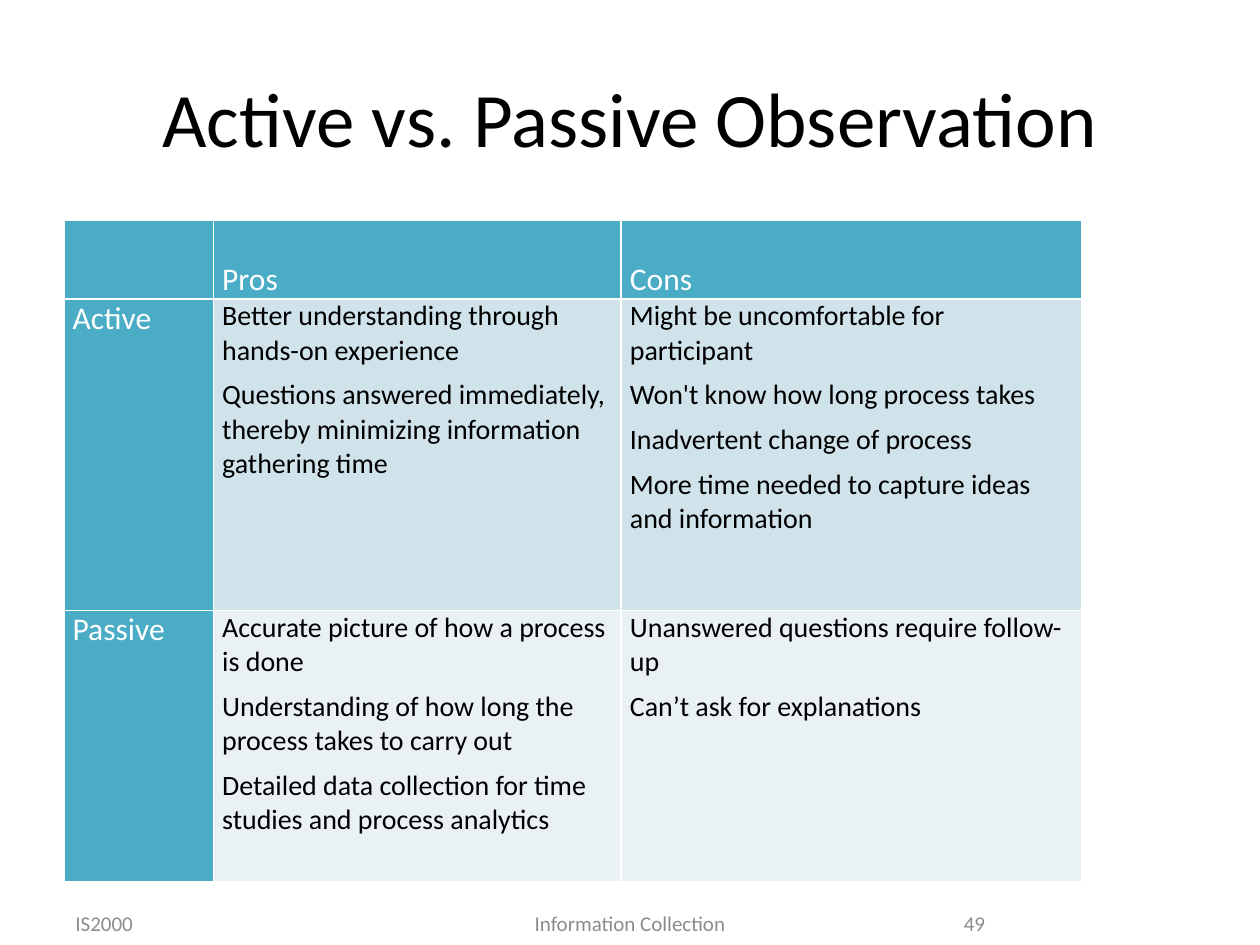
from lxml import etree
from pptx import Presentation
from pptx import util as u
from pptx.dml import color
from pptx.enum import text
from pptx.oxml import ns

Pt = u.Pt
al = text.PP_ALIGN
mid = text.MSO_ANCHOR.MIDDLE


def paint(hexa):
    return color.RGBColor.from_string(hexa)


def style(para, size, hexa, align):
    para.alignment = align
    for run in para.runs:
        run.font.name = "Calibri"
        run.font.size = Pt(size)
        run.font.color.rgb = paint(hexa)


deck = Presentation()
deck.slide_width, deck.slide_height = Pt(720), Pt(540)
slide = deck.slides.add_slide(deck.slide_layouts[6])

# Title and footer
for words, x, y, w, h, size, hexa, align in [
    ("Active vs. Passive Observation", 36, 21.6, 648, 90, 44, "000000", al.CENTER),
    ("IS2000", 36, 516, 168, 22.5, 12, "8C8C8C", al.LEFT),
    ("Information Collection", 221, 516, 278, 22.5, 12, "8C8C8C", al.CENTER),
    ("49", 516, 516, 54, 22.5, 12, "8C8C8C", al.RIGHT),
]:
    box = slide.shapes.add_textbox(Pt(x), Pt(y), Pt(w), Pt(h))
    frame = box.text_frame
    frame.word_wrap = True
    frame.vertical_anchor = mid
    frame.text = words
    style(frame.paragraphs[0], size, hexa, align)

# Table content: one paragraph per line
rows = [
    ["", "Pros", "Cons"],
    ["Active",
     "Better understanding through hands-on experience\n"
     "Questions answered immediately, thereby minimizing information gathering time",
     "Might be uncomfortable for participant\n"
     "Won't know how long process takes\n"
     "Inadvertent change of process\n"
     "More time needed to capture ideas and information"],
    ["Passive",
     "Accurate picture of how a process is done\n"
     "Understanding of how long the process takes to carry out\n"
     "Detailed data collection for time studies and process analytics",
     "Unanswered questions require follow-up\n"
     "Can’t ask for explanations"],
]
wide = [85.5, 233, 263]
high = [45, 178, 155]
bands = ["4BACC6", "D0E3EA", "E9F1F5"]

# Table grid
table = slide.shapes.add_table(3, 3, Pt(36.5), Pt(126), Pt(sum(wide)), Pt(sum(high))).table
table.first_row = table.horz_banding = False
for col, w in zip(table.columns, wide):
    col.width = Pt(w)
for row, h in zip(table.rows, high):
    row.height = Pt(h)

# Table cells
for r, line in enumerate(rows):
    for c, words in enumerate(line):
        cell = table.cell(r, c)
        head = r == 0 or c == 0
        cell.margin_left = cell.margin_right = Pt(5)
        cell.margin_top = cell.margin_bottom = 0
        cell.vertical_anchor = text.MSO_ANCHOR.BOTTOM if r == 0 else text.MSO_ANCHOR.TOP

        # White borders
        props = cell._tc.get_or_add_tcPr()
        for side in ("lnL", "lnR", "lnT", "lnB"):
            edge = etree.SubElement(props, ns.qn("a:" + side), w=str(Pt(1)))
            solid = etree.SubElement(edge, ns.qn("a:solidFill"))
            etree.SubElement(solid, ns.qn("a:srgbClr"), val="FFFFFF")
        cell.fill.solid()
        cell.fill.fore_color.rgb = paint(bands[0] if head else bands[r])

        # Text
        cell.text_frame.text = words
        for n, para in enumerate(cell.text_frame.paragraphs):
            if head:
                style(para, 18, "FFFFFF", al.JUSTIFY)
            else:
                style(para, 16, "000000", al.LEFT)
                para.space_after = Pt(3)
                if n:
                    para.space_before = Pt(3)

deck.save("out.pptx")
